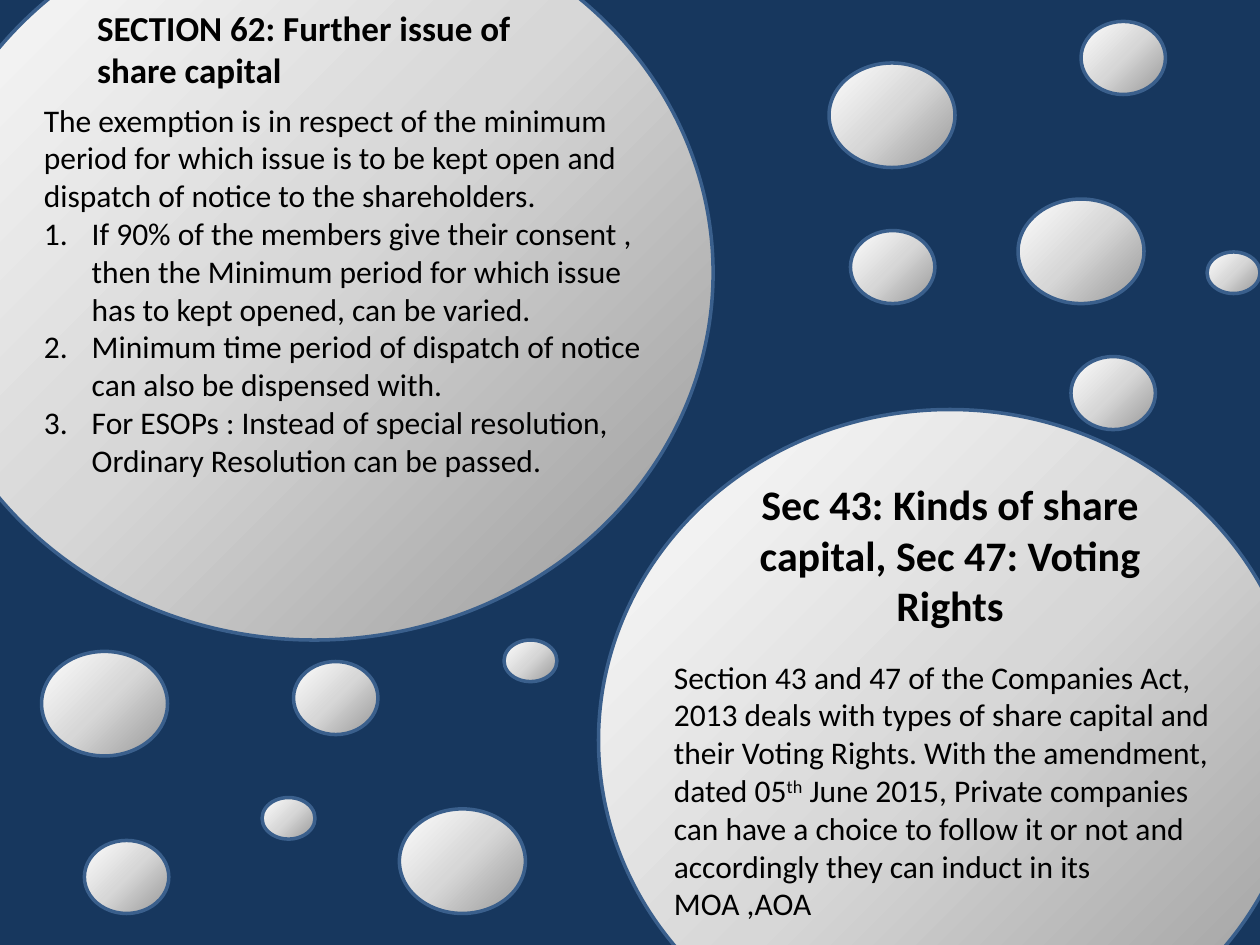
from copy import deepcopy
from dataclasses import dataclass

from pptx import Presentation
from pptx import util as u
from pptx.dml.color import RGBColor
from pptx.enum import shapes, text
from pptx.oxml import ns, xmlchemy


@dataclass(frozen=True)
class Theme:
    """Colours, font and type sizes of the slide."""

    navy: str = "17375E"
    outline: str = "3A5F8C"
    ink: str = "000000"
    sheen: tuple = ((0, "979797"), (0.5, "D7D7D7"), (1, "FFFFFF"))
    sheen_angle: int = 135
    outline_width: int = 2
    font: str = "Calibri"
    body: int = 18
    heading: int = 20
    large_heading: int = 24


class BubbleSlide:
    """Holds the theme and the current slide, and draws its elements."""

    def __init__(self, slide, theme):
        """Take the slide and paint its background."""
        self.slide, self.theme = slide, theme
        backdrop = slide.background.fill
        backdrop.solid()
        backdrop.fore_color.rgb = RGBColor.from_string(theme.navy)

    def bubble(self, left, top, width, height):
        """Draw an outlined ellipse with a three-stop sheen."""
        ball = self.slide.shapes.add_shape(
            shapes.MSO_SHAPE.OVAL, *map(u.Inches, (left, top, width, height)))
        ball.shadow.inherit = False
        ball.line.color.rgb = RGBColor.from_string(self.theme.outline)
        ball.line.width = u.Pt(self.theme.outline_width)
        ball.fill.gradient()
        ball.fill.gradient_angle = self.theme.sheen_angle
        stops = ball.element.spPr.find(".//" + ns.qn("a:gsLst"))
        stops.append(deepcopy(stops[0]))
        for stop, (position, colour) in zip(ball.fill.gradient_stops, self.theme.sheen):
            stop.position = position
            stop.color.rgb = RGBColor.from_string(colour)

    def title(self, box, wording):
        """Place the title placeholder in front of the bubbles."""
        holder = self.slide.shapes.title
        self.slide.shapes.element.append(holder.element)
        holder.left, holder.top, holder.width, holder.height = map(u.Inches, box)
        return self.set_text(holder, [wording], self.theme.heading, bold=True)

    def passage(self, box, paragraphs, size, **style):
        """Add a wrapped text box holding the paragraphs."""
        holder = self.slide.shapes.add_textbox(*map(u.Inches, box))
        return self.set_text(holder, paragraphs, size, **style)

    def set_text(self, holder, paragraphs, size, bold=False, align=text.PP_ALIGN.LEFT):
        """Fill a holder with text and format its runs."""
        frame = holder.text_frame
        frame.text = "\n".join(paragraphs)
        frame.word_wrap = True
        frame.auto_size = text.MSO_AUTO_SIZE.SHAPE_TO_FIT_TEXT
        frame.vertical_anchor = text.MSO_ANCHOR.TOP
        for paragraph in frame.paragraphs:
            paragraph.alignment = align
            for run in paragraph.runs:
                self.style(run, size, bold)
        return frame

    def style(self, run, size, bold=False):
        """Give a run the theme's font and colour."""
        run.font.name = self.theme.font
        run.font.size = u.Pt(size)
        run.font.bold = bold
        run.font.color.rgb = RGBColor.from_string(self.theme.ink)

    def number(self, paragraphs):
        """Turn paragraphs into a numbered list with a hanging indent."""
        for paragraph in paragraphs:
            properties = paragraph._p.get_or_add_pPr()
            properties.set("marL", str(u.Inches(0.38)))
            properties.set("indent", str(u.Inches(-0.38)))
            numbering = xmlchemy.OxmlElement("a:buAutoNum")
            numbering.set("type", "arabicPeriod")
            properties.append(numbering)

    def superscript(self, paragraph, raised, rest):
        """Continue a paragraph with a raised run and plain text."""
        for wording, baseline in ((raised, "30000"), (rest, "0")):
            run = paragraph.add_run()
            run.text = wording
            self.style(run, self.theme.body)
            run.font._element.set("baseline", baseline)


def main():
    """Build the share capital slide."""
    deck = Presentation()
    deck.slide_width, deck.slide_height = u.Inches(10), u.Inches(7.5)
    theme = Theme()
    page = BubbleSlide(deck.slides.add_slide(deck.slide_layouts[5]), theme)

    page.bubble(-0.67, -0.75, 6.33, 5.83)
    page.bubble(4.75, 3.25, 5.58, 5.25)
    small_bubbles = {
        (1, 0.83): [(3.17, 6.42), (8.08, 1.58), (0.33, 5.17), (6.58, 0.5)],
        (0.67, 0.58): [(6.75, 1.83), (8.5, 2.83), (0.67, 6.67), (8.58, 0.17), (2.33, 5.25)],
        (0.42, 0.33): [(9.58, 2), (2.08, 6.33), (4, 5.08)],
    }
    for size, corners in small_bubbles.items():
        for corner in corners:
            page.bubble(*corner, *size)

    page.title((0.67, 0, 4.08, 0.77), "SECTION 62: Further issue of share capital")
    exemptions = page.passage((0.25, 0.75, 5, 3.43), [
        "The exemption is in respect of the minimum period for which issue is to be "
        "kept open and dispatch of notice to the shareholders.",
        "If 90% of the members give their consent , then the Minimum period for which "
        "issue has to kept opened, can be varied.",
        "Minimum time period of dispatch of notice can also be dispensed with.",
        "For ESOPs : Instead of special resolution, Ordinary Resolution can be passed.",
    ], theme.body)
    page.number(exemptions.paragraphs[1:])

    page.passage((5.58, 3.75, 3.92, 1.78),
                 ["Sec 43: Kinds of share capital, Sec 47: Voting Rights"],
                 theme.large_heading, bold=True, align=text.PP_ALIGN.CENTER)
    voting = page.passage((5.25, 5.17, 4.5, 2.22), [
        "Section 43 and 47 of the Companies Act, 2013 deals with types of share capital "
        "and their Voting Rights. With the amendment, dated 05",
    ], theme.body)
    page.superscript(voting.paragraphs[0], "th",
                     " June 2015, Private companies can have a choice to follow it or not "
                     "and accordingly they can induct in its MOA ,AOA")

    deck.save("out.pptx")


if __name__ == "__main__":
    main()
